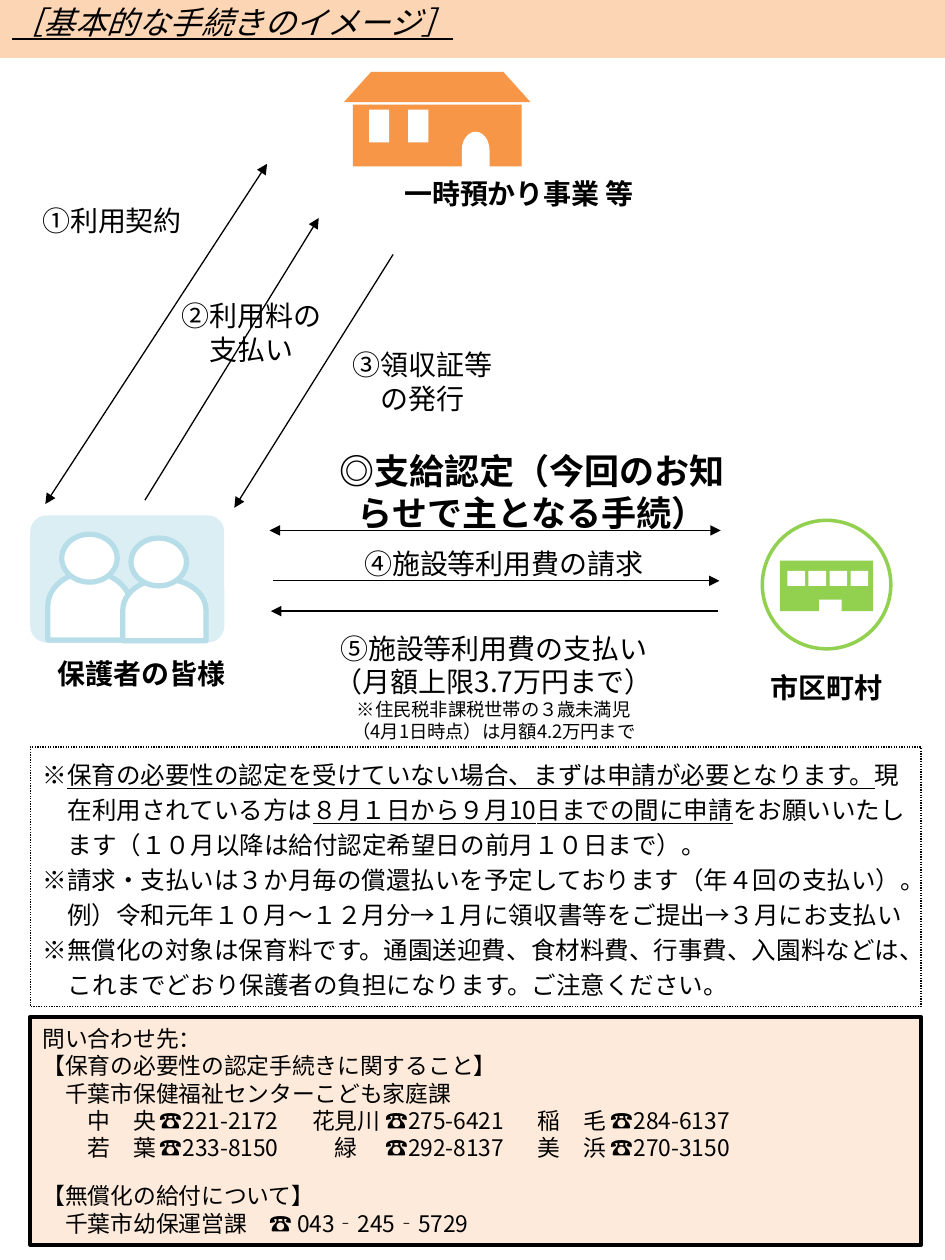
from dataclasses import dataclass

from lxml.etree import SubElement
from pptx import Presentation
from pptx.dml.color import RGBColor
from pptx.enum.dml import MSO_LINE
from pptx.enum.shapes import MSO_CONNECTOR, MSO_SHAPE
from pptx.enum.text import MSO_ANCHOR, PP_ALIGN
from pptx.oxml.ns import qn
from pptx.util import Emu, Inches, Pt

COLUMNS, ROWS = 75, 100  # the slide as a grid; all lengths below are in cells
CELL = Inches(0.1)


@dataclass(frozen=True)
class Theme:
    font: str = "Noto Sans CJK JP"
    ink: str = "000000"
    paper: str = "FFFFFF"
    banner: str = "FCD5B5"
    contact: str = "FDEADA"
    house: str = "F79646"
    town: str = "92D050"
    family: str = "DBEEF4"
    outline: str = "B7DEE8"
    title: float = 18
    key: float = 20
    label: float = 16
    note: float = 14
    phone: float = 13
    small: float = 10.5
    leading: float = 1.2


THEME = Theme()


@dataclass(frozen=True)
class Box:
    left: float
    top: float
    width: float
    height: float


@dataclass(frozen=True)
class Label:
    box: Box
    lines: tuple[str, ...]
    size: float = THEME.label
    bold: bool = False
    small_from: int = 99  # first line set in small type


@dataclass(frozen=True)
class Arrow:
    start: tuple[float, float]
    end: tuple[float, float]
    both_ways: bool = False


def cells(count: float) -> Emu:
    return Emu(round(count * CELL))


def add_block(shapes, kind, box: Box, fill: str | None = None, line: str | None = None,
              weight: float = 0.75, turn: float = 0, adjust: float | None = None):
    block = shapes.add_shape(kind, *map(cells, (box.left, box.top, box.width, box.height)))
    block.shadow.inherit = False
    block.rotation = turn
    if adjust is not None:
        block.adjustments[0] = adjust
    if fill:
        block.fill.solid()
        block.fill.fore_color.rgb = RGBColor.from_string(fill)
    else:
        block.fill.background()
    if line:
        block.line.color.rgb = RGBColor.from_string(line)
        block.line.width = Pt(weight)
    else:
        block.line.fill.background()
    return block


def write(paragraph, text, *, size: float, bold=False, italic=False, underline=False,
          align=PP_ALIGN.LEFT, leading: float | None = None, hanging: float = 0,
          before: float = 0, tabs: tuple[float, ...] = ()) -> None:
    """Write text, or (text, underline) pairs, as one paragraph."""
    paragraph.alignment = align
    paragraph.line_spacing = Pt(leading or size * THEME.leading)
    paragraph.space_before = Pt(before)
    properties = paragraph._p.get_or_add_pPr()
    if hanging:
        properties.set("marL", str(cells(hanging)))
        properties.set("indent", str(-cells(hanging)))
    if tabs:
        stops = SubElement(properties, qn("a:tabLst"))
        for stop in tabs:
            SubElement(stops, qn("a:tab"), pos=str(cells(stop)), algn="l")
    for words, lined in [(text, underline)] if isinstance(text, str) else text:
        run = paragraph.add_run()
        run.text = words
        font = run.font
        font.name, font.size = THEME.font, Pt(size)
        font.bold, font.italic, font.underline = bold, italic, lined
        font.color.rgb = RGBColor.from_string(THEME.ink)
        SubElement(run._r.get_or_add_rPr(), qn("a:ea"), typeface=THEME.font)


def fill_frame(frame, paragraphs: list[dict], **common) -> None:
    frame.word_wrap = True
    for index, entry in enumerate(paragraphs):
        paragraph = frame.add_paragraph() if index else frame.paragraphs[0]
        write(paragraph, **{**common, **entry})


def add_label(shapes, label: Label) -> None:
    box = label.box
    field = shapes.add_textbox(*map(cells, (box.left, box.top, box.width, box.height)))
    lines = [{"text": line, "size": THEME.small if i >= label.small_from else label.size}
             for i, line in enumerate(label.lines)]
    fill_frame(field.text_frame, lines, bold=label.bold, align=PP_ALIGN.CENTER)


def add_arrow(shapes, arrow: Arrow) -> None:
    link = shapes.add_connector(MSO_CONNECTOR.STRAIGHT, *map(cells, arrow.start + arrow.end))
    link.line.color.rgb = RGBColor.from_string(THEME.ink)
    link.line.width = Pt(0.75)
    outline = link.line._get_or_add_ln()
    for tip in ("a:headEnd", "a:tailEnd") if arrow.both_ways else ("a:tailEnd",):
        SubElement(outline, qn(tip), type="triangle")
    SubElement(link._element.spPr, qn("a:effectLst"))


def draw_house(shapes) -> None:
    add_block(shapes, MSO_SHAPE.RECTANGLE, Box(28, 8.3, 13.4, 4.9), THEME.house)
    add_block(shapes, MSO_SHAPE.TRAPEZOID, Box(27.3, 5.7, 14.8, 2.4), THEME.house, adjust=0.9)
    for column in range(2):
        add_block(shapes, MSO_SHAPE.RECTANGLE, Box(29.3 + 3.1 * column, 8.7, 1.6, 2.6), THEME.paper)
    add_block(shapes, MSO_SHAPE.FLOWCHART_DELAY, Box(36.3, 10.8, 2.9, 2.2), THEME.paper, turn=270)


def draw_town_hall(shapes) -> None:
    add_block(shapes, MSO_SHAPE.OVAL, Box(60.5, 41.3, 10.2, 10.2), THEME.paper, THEME.town, 2)
    add_block(shapes, MSO_SHAPE.RECTANGLE, Box(61.9, 44.5, 7.4, 4), THEME.town)
    add_block(shapes, MSO_SHAPE.RECTANGLE, Box(65, 47.6, 1.8, 1), THEME.paper)
    for column in range(4):
        add_block(shapes, MSO_SHAPE.RECTANGLE, Box(62.5 + 1.67 * column, 45.3, 1.4, 1.2), THEME.paper)


def draw_family(shapes) -> None:
    add_block(shapes, MSO_SHAPE.ROUNDED_RECTANGLE, Box(2.4, 40.9, 15.4, 10.1), THEME.family, adjust=0.13)
    people = ((Box(4.4, 44.8, 5.4, 6.6), Box(4.9, 42.4, 4.4, 3.8)),
              (Box(10.6, 45.1, 4.9, 6.6), Box(10.4, 42.7, 4.4, 3.8)))
    for body, head in people:
        add_block(shapes, MSO_SHAPE.FLOWCHART_DELAY, body, THEME.paper, THEME.outline, 3, turn=270)
        add_block(shapes, MSO_SHAPE.OVAL, head, THEME.paper, THEME.outline, 3)


ARROWS = (
    Arrow((3.6, 40), (21.2, 13), both_ways=True),
    Arrow((11.5, 39.7), (25.3, 17.3)),
    Arrow((31.2, 20.2), (18.6, 40.3)),
    Arrow((21.4, 42.1), (57.2, 42.1), both_ways=True),
    Arrow((21.7, 46.1), (57.1, 46.1)),
    Arrow((57, 48.5), (21.5, 48.5)),
)
LABELS = (
    Label(Box(29.8, 13.5, 22.8, 3.7), ("一時預かり事業 等",), bold=True),
    Label(Box(1.3, 51.6, 19.9, 3.5), ("保護者の皆様",), bold=True),
    Label(Box(58.1, 52.7, 15, 3.7), ("市区町村",), bold=True),
    Label(Box(2, 15.7, 13.8, 3.7), ("①利用契約",)),
    Label(Box(11.5, 23.2, 16.9, 6.4), ("②利用料の", "支払い")),
    Label(Box(26.5, 27.1, 14.1, 6.4), ("③領収証等", "の発行")),
    Label(Box(25.2, 42.9, 29.6, 3.7), ("④施設等利用費の請求",)),
    Label(Box(22.6, 49.6, 33.2, 9.9), ("⑤施設等利用費の支払い", "（月額上限3.7万円まで）",
          "※住民税非課税世帯の３歳未満児", "（4月1日時点）は月額4.2万円まで"), small_from=2),
    Label(Box(24.9, 35.2, 34.7, 7.7), ("◎支給認定（今回のお知らせで主となる手続）",), THEME.key, True),
)
NOTES = (
    (("※", False), ("保育の必要性の認定を受けていない場合、まずは申請が必要となります。", True),
     ("現在利用されている方は", False), ("８月１日から９月10日までの間に申請", True),
     ("をお願いいたします（１０月以降は給付認定希望日の前月１０日まで）。", False)),
    "※請求・支払いは３か月毎の償還払いを予定しております（年４回の支払い）。",
    "　例）令和元年１０月～１２月分→１月に領収書等をご提出→３月にお支払い",
    "※無償化の対象は保育料です。通園送迎費、食材料費、行事費、入園料などは、これまでどおり保護者の負担になります。ご注意ください。",
)
PHONE_TABS = (3.6, 9.3, 21.4, 27.2, 39.3, 45.1)  # name and number, three times
CONTACTS = [
    {"text": "問い合わせ先："},
    {"text": "【保育の必要性の認定手続きに関すること】"},
    {"text": "　千葉市保健福祉センターこども家庭課"},
    {"text": "\t中　央\t☎221-2172\t花見川\t☎275-6421\t稲　毛\t☎284-6137", "tabs": PHONE_TABS},
    {"text": "\t若　葉\t☎233-8150\t　緑\t☎292-8137\t美　浜\t☎270-3150", "tabs": PHONE_TABS},
    {"text": "【無償化の給付について】", "before": 12},
    {"text": "　千葉市幼保運営課　☎ 043‐245‐5729"},
]


def main() -> None:
    deck = Presentation()
    deck.slide_width, deck.slide_height = cells(COLUMNS), cells(ROWS)
    shapes = deck.slides.add_slide(deck.slide_layouts[6]).shapes

    # Title banner
    banner = add_block(shapes, MSO_SHAPE.RECTANGLE, Box(0, -0.4, COLUMNS, 5), THEME.banner)
    banner.text_frame.vertical_anchor = MSO_ANCHOR.MIDDLE
    fill_frame(banner.text_frame, [{"text": "［基本的な手続きのイメージ］"}], size=THEME.title,
               italic=True, underline=True, leading=16, hanging=2)

    # The three parties
    for draw in (draw_house, draw_town_hall, draw_family):
        draw(shapes.add_group_shape().shapes)

    # Steps between them
    for arrow in ARROWS:
        add_arrow(shapes, arrow)
    for label in LABELS:
        add_label(shapes, label)

    # Notes
    notes = add_block(shapes, MSO_SHAPE.RECTANGLE, Box(2.4, 59.3, 70.7, 20.6), line=THEME.ink)
    notes.line.dash_style = MSO_LINE.ROUND_DOT
    notes.text_frame.vertical_anchor = MSO_ANCHOR.MIDDLE
    fill_frame(notes.text_frame, [{"text": note} for note in NOTES],
               size=THEME.note, leading=20, hanging=2)

    # Contact details
    contact = add_block(shapes, MSO_SHAPE.RECTANGLE, Box(2.4, 80.7, 70.7, 18.1),
                        THEME.contact, THEME.ink, 2.25)
    contact.text_frame.vertical_anchor = MSO_ANCHOR.MIDDLE
    fill_frame(contact.text_frame, CONTACTS, size=THEME.phone)

    deck.save("out.pptx")


if __name__ == "__main__":
    main()
